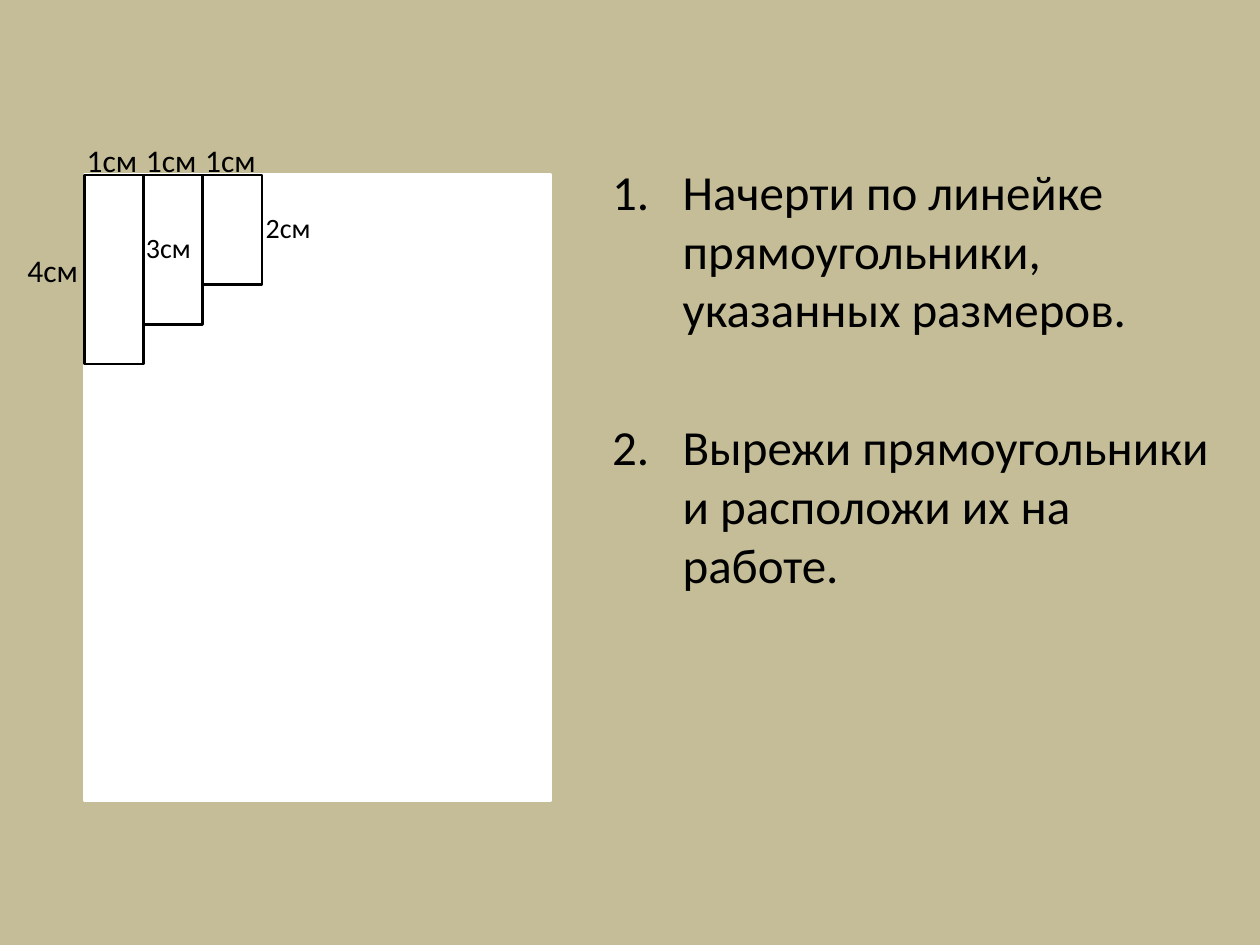
from dataclasses import dataclass

from lxml import etree
from pptx import Presentation
from pptx import util as u
from pptx.dml.color import RGBColor
from pptx.enum import shapes
from pptx.oxml.ns import qn


@dataclass(frozen=True)
class Theme:
    background: str = "C4BD97"
    paper: str = "FFFFFF"
    ink: str = "000000"
    font: str = "Calibri"
    body: int = 28
    label: int = 18
    small: int = 16


THEME = Theme()
LEFT, TOP = 0.67, 1.39      # corner of the paper sheet, inches
COL = 0.47                  # width of one strip
STEP = 0.315                # extra height per centimetre
BASE = 0.24                 # height left when the steps are taken off
STRIPS = (4, 3, 2)          # strip lengths in centimetres
STEPS = (
    "Начерти по линейке прямоугольники, указанных размеров.",
    "Вырежи прямоугольники и расположи их на работе.",
)


def rgb(value):
    return RGBColor.from_string(value)


def box(s, x, y, w, h, line, weight):
    sp = s.shapes.add_shape(shapes.MSO_SHAPE.RECTANGLE,
                            *map(u.Inches, (x, y, w, h)))
    sp.shadow.inherit = False
    sp.fill.solid()
    sp.fill.fore_color.rgb = rgb(THEME.paper)
    sp.line.color.rgb = rgb(line)
    sp.line.width = u.Pt(weight)


def number(p, indent):
    """Give the paragraph an automatic number with a hanging indent."""
    pPr = p._p.get_or_add_pPr()
    pPr.set("marL", str(u.Inches(indent)))
    pPr.set("indent", str(-u.Inches(indent)))
    etree.SubElement(pPr, qn("a:buFont"), typeface="+mj-lt")
    etree.SubElement(pPr, qn("a:buAutoNum"), type="arabicPeriod")


def write(s, x, y, w, h, *lines, size=THEME.label, wrap=True,
          numbered=False, first=0, gap=0):
    """Add a text box; first and gap are points before the paragraphs."""
    tf = s.shapes.add_textbox(*map(u.Inches, (x, y, w, h))).text_frame
    tf.word_wrap = wrap
    for i, line in enumerate(lines):
        p = tf.add_paragraph() if i else tf.paragraphs[0]
        p.space_before = u.Pt(gap if i else first)
        if numbered:
            number(p, 0.56)
        r = p.add_run()
        r.text = line
        r.font.name = THEME.font
        r.font.size = u.Pt(size)
        r.font.color.rgb = rgb(THEME.ink)


def draw_strips(s):
    for i, length in enumerate(STRIPS):
        box(s, LEFT + i * COL, TOP, COL, BASE + length * STEP, THEME.ink, 1.5)
    for i in range(len(STRIPS)):
        write(s, LEFT + i * COL - 0.08, TOP - 0.32, 0.66, 0.4, "1см")


def label_lengths(s):
    write(s, 0.12, 1.94, 0.67, 0.4, "4см")
    write(s, 1.06, 1.78, 0.56, 0.37, "3см", size=THEME.small, wrap=False)
    write(s, 2.01, 1.62, 0.62, 0.38, "2см", size=THEME.small)


def main():
    prs = Presentation()
    prs.slide_width, prs.slide_height = u.Inches(10), u.Inches(7.5)
    s = prs.slides.add_slide(prs.slide_layouts[6])
    s.background.fill.solid()
    s.background.fill.fore_color.rgb = rgb(THEME.background)

    write(s, 4.76, 1.23, 5.06, 4.65, *STEPS, size=THEME.body,
          numbered=True, first=5.6, gap=45)
    box(s, LEFT, TOP, 3.7, 4.96, THEME.paper, 2)
    draw_strips(s)
    label_lengths(s)
    prs.save("out.pptx")


if __name__ == "__main__":
    main()
